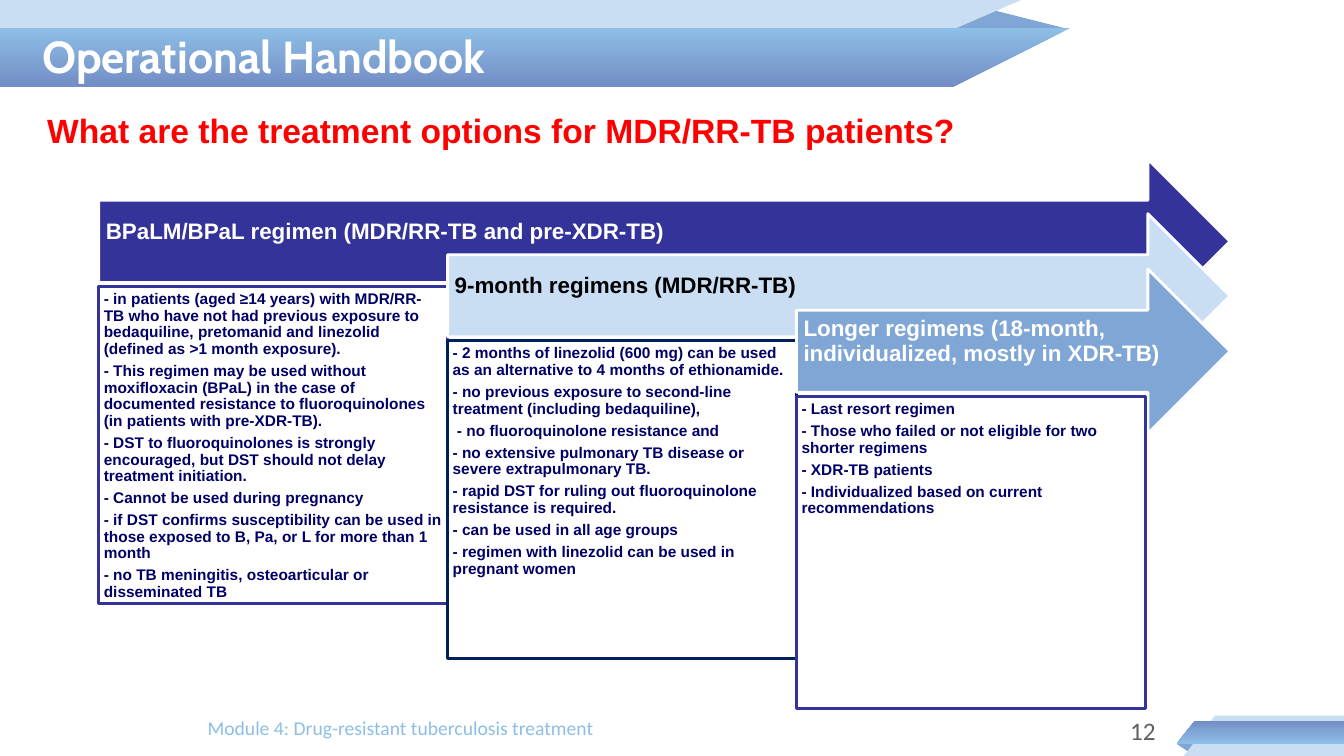
import pptx
import pptx.util
import pptx.dml.color
import pptx.enum.shapes
import pptx.enum.text

PX = 9144
DARK, MID, SKY, PALE = "738EC5", "80A6D5", "8DBEE6", "C9DDF3"
NAVY, WHITE = "333399", "FFFFFF"

TITLE = "Operational Handbook"
QUERY = "What are the treatment options for MDR/RR-TB patients?"
FOOT = "Module 4: Drug-resistant tuberculosis treatment"
PAGE = "12"

BANDS = [
    ([(943, 29), (981, 9), (1060, 29)], [MID]),
    ([(0, 0), (1013, 0), (814, 86), (0, 86)], [PALE]),
    ([(0, 28), (1061, 28), (945, 86), (0, 86)], [SKY, DARK]),
    ([(1167, 738), (1185, 738), (1179, 746)], [MID]),
    ([(1174, 750), (1205, 710), (1333, 710), (1333, 750)], [PALE]),
    ([(1167, 738), (1185, 715), (1333, 715), (1333, 738)], [DARK, SKY]),
]

PLANS = [
    ("BPaLM/BPaL regimen (MDR/RR-TB and pre-XDR-TB)", NAVY, WHITE, NAVY, 315, [
        "- in patients (aged ≥14 years) with MDR/RR-TB who have not had previous exposure to "
        "bedaquiline, pretomanid and linezolid (defined as >1 month exposure).",
        "- This regimen may be used without moxifloxacin (BPaL) in the case of documented "
        "resistance to fluoroquinolones (in patients with pre-XDR-TB).",
        "- DST to fluoroquinolones is strongly encouraged, but DST should not delay "
        "treatment initiation.",
        "- Cannot be used during pregnancy",
        "- if DST confirms susceptibility can be used in those exposed to B, Pa, or L "
        "for more than 1 month",
        "- no TB meningitis, osteoarticular or disseminated TB",
    ]),
    ("9-month regimens (MDR/RR-TB)", PALE, "000000", "00205C", 315, [
        "- 2 months of linezolid (600 mg) can be used as an alternative to "
        "4 months of ethionamide.",
        "- no previous exposure to second-line treatment (including bedaquiline),",
        " - no fluoroquinolone resistance and",
        "- no extensive pulmonary TB disease or severe extrapulmonary TB.",
        "- rapid DST for ruling out fluoroquinolone resistance is required.",
        "- can be used in all age groups",
        "- regimen with linezolid can be used in pregnant women",
    ]),
    ("Longer regimens (18-month, individualized, mostly in XDR-TB)", MID, WHITE, NAVY, 310, [
        "- Last resort regimen",
        "- Those who failed or not eligible for two shorter regimens",
        "- XDR-TB patients",
        "- Individualized based on current recommendations",
    ]),
]

LEFT, TOP, TIP = 98, 158, 1220
WIDE, TALL, DROP = 346, 163, 126

Pt = pptx.util.Pt
KIND = pptx.enum.shapes.MSO_SHAPE
ALIGN = pptx.enum.text.PP_ALIGN
ANCHOR = pptx.enum.text.MSO_ANCHOR


def tint(code):
    return pptx.dml.color.RGBColor.from_string(code)


def apply(item, vals):
    for key, val in vals.items():
        setattr(item, key, val)


def area(*nums):
    return [num * PX for num in nums]


def paint(shape, fill, edge=None):
    shape.shadow.inherit = False
    if len(fill) == 1:
        shape.fill.solid()
        shape.fill.fore_color.rgb = tint(fill[0])
    else:
        shape.fill.gradient()
        shape.fill.gradient_angle = 270
        for stop, code in zip(shape.fill.gradient_stops, fill):
            stop.color.rgb = tint(code)
    if edge:
        shape.line.color.rgb = tint(edge)
        shape.line.width = Pt(2)
    else:
        shape.line.fill.background()


def write(shape, lines, font, size, code, bold=True, inset=(10, 5, 10, 5),
          anchor=ANCHOR.TOP, para={}):
    frame = shape.text_frame
    sides = ("margin_left", "margin_top", "margin_right", "margin_bottom")
    apply(frame, dict(zip(sides, area(*inset))))
    apply(frame, {"word_wrap": True, "vertical_anchor": anchor,
                  "auto_size": pptx.enum.text.MSO_AUTO_SIZE.NONE})
    frame.text = "\n".join(lines)
    for part in frame.paragraphs:
        apply(part, {"alignment": ALIGN.LEFT, **para})
        apply(part.font, {"name": font, "size": Pt(size), "bold": bold})
        part.font.color.rgb = tint(code)


def main():
    deck = pptx.Presentation()
    apply(deck, {"slide_width": 1333 * PX, "slide_height": 750 * PX})
    slide = deck.slides.add_slide(deck.slide_layouts[5])
    shapes = slide.shapes

    for dots, fill in BANDS:
        form = shapes.build_freeform(*dots[0], scale=PX)
        form.add_line_segments(dots[1:], close=True)
        paint(form.convert_to_shape(), fill)

    title = shapes.title
    apply(title, dict(zip(("left", "top", "width", "height"), area(32, 11, 802, 89))))
    write(title, [TITLE], "Cabin", 32, WHITE, anchor=ANCHOR.MIDDLE)
    shapes.element.append(title.element)

    write(shapes.add_textbox(*area(37, 104, 1273, 46)), [QUERY], "Arial", 24, "FF0000")
    write(shapes.add_textbox(*area(196, 705, 802, 40)), [FOOT], "Calibri", 14, SKY, False)

    para = {"line_spacing": 0.9, "space_after": Pt(3.85)}
    for i, (head, fill, ink, edge, high, notes) in enumerate(PLANS):
        x, y = LEFT + i * WIDE, TOP + i * 109 // 2
        arrow = shapes.add_shape(KIND.RIGHT_ARROW, *area(x, y, TIP - x, TALL))
        paint(arrow, [fill], WHITE)
        write(arrow, [head], "Arial", 16, ink, inset=(7, 7, 28, 26),
              anchor=ANCHOR.MIDDLE, para=para)
        box = shapes.add_shape(KIND.RECTANGLE, *area(x, y + DROP, WIDE, high))
        paint(box, [WHITE], edge)
        write(box, notes, "Arial", 11, "000066", inset=(5, 5, 5, 5), para=para)

    write(shapes.add_textbox(*area(1013, 705, 143, 40)), [PAGE], "Calibri", 18, "606060",
          False, para={"alignment": ALIGN.RIGHT})
    deck.save("out.pptx")


if __name__ == "__main__":
    main()
